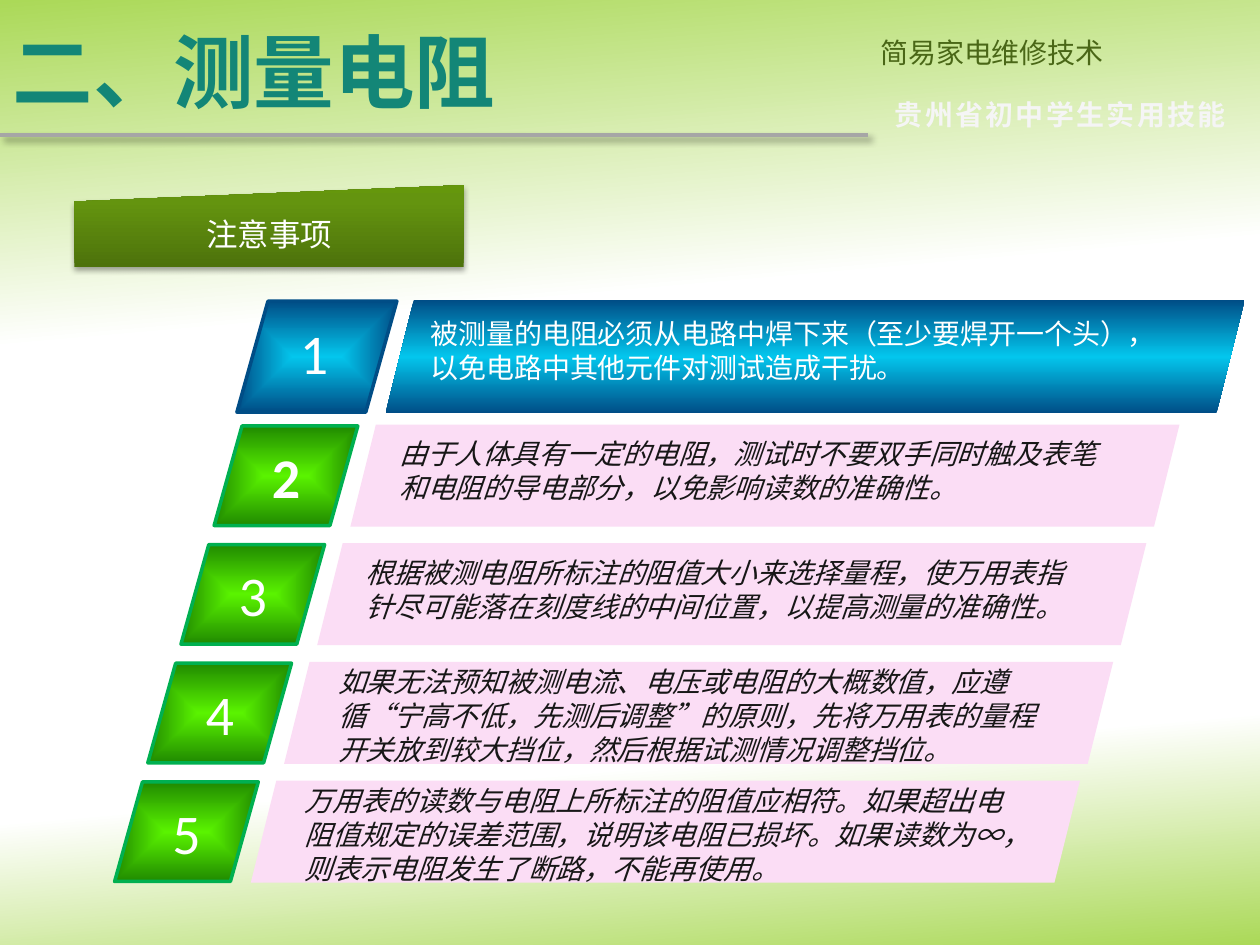
from dataclasses import dataclass
from typing import Optional

from lxml.etree import SubElement
from pptx import Presentation
from pptx.dml.color import RGBColor
from pptx.enum.shapes import MSO_CONNECTOR as Connector, MSO_SHAPE as Preset
from pptx.enum.text import MSO_ANCHOR as Anchor, MSO_AUTO_SIZE as AutoSize, PP_ALIGN as Align
from pptx.oxml.ns import qn
from pptx.util import Pt

Stops = tuple[tuple[int, str], ...]


@dataclass(frozen=True)
class Theme:
    cjk: str = "Noto Sans CJK SC"
    body_font: str = "Arial"
    digit_font: str = "Calibri"
    title_size: float = 46
    digit_size: float = 32
    label_size: float = 18
    body_size: float = 16
    body_leading: float = 19.5
    title: str = "138677"
    course: str = "4A6717"
    white: str = "FFFFFF"
    motto: str = "F5F5F5"
    ink: str = "171717"
    rule: str = "A6A6A6"
    banner: str = "FBDDF5"
    green_line: str = "00B050"
    blue_line: str = "004D86"
    page: Stops = ((0, "ABD958"), (33, "FFFFFF"), (52, "FFFFFF"), (78, "FFFFFF"), (100, "ABD958"))
    label: Stops = ((0, "4D720B"), (80, "64940F"), (100, "65970C"))
    green: Stops = ((0, "5AF300"), (100, "208A00"))
    blue: Stops = ((0, "03C6ED"), (100, "004D86"))
    blue_banner: Stops = ((0, "004D86"), (50, "03C6ED"), (100, "004D86"))


@dataclass(frozen=True)
class Box:
    left: float
    top: float
    width: float
    height: float

    def lengths(self) -> tuple:
        return Pt(self.left), Pt(self.top), Pt(self.width), Pt(self.height)

    def moved(self, right: float, down: float) -> "Box":
        return Box(self.left + right, self.top + down, self.width, self.height)


@dataclass(frozen=True)
class Style:
    size: float
    color: str
    latin: str = THEME_FONT if (THEME_FONT := Theme.cjk) else ""
    bold: bool = False
    italic: bool = False
    tracking: float = 0
    align: Align = Align.LEFT
    leading: Optional[float] = None


@dataclass(frozen=True)
class Note:
    number: str
    words: str
    badge: Box
    digit: Box
    banner: Box
    text: Box
    active: bool = False


THEME = Theme()
STEP_X, STEP_Y = -18.95, 67.8
BADGE = Box(122.4, 243.4, 82.1, 56.9)
DIGIT = BADGE.moved(25.9, 5.8)
BANNER = Box(200.2, 242.6, 473.8, 58.3)
TWO_LINES = Box(221, 245.5, 425.5, 46)
THREE_LINES = Box(224, 240.4, 425.5, 65.5)

ACTIVE_NOTE = Note(
    "1", "被测量的电阻必须从电路中焊下来（至少要焊开一个头），以免电路中其他元件对测试造成干扰。",
    Box(135.4, 172.1, 91.4, 63.4), Box(164.2, 178.6, 34.6, 45.4),
    Box(220.3, 171.4, 491, 64.8), Box(239, 177.1, 425.5, 46), True)
OTHER_NOTES = (
    ("由于人体具有一定的电阻，测试时不要双手同时触及表笔和电阻的导电部分，以免影响读数的准确性。", TWO_LINES),
    ("根据被测电阻所标注的阻值大小来选择量程，使万用表指针尽可能落在刻度线的中间位置，以提高测量的准确性。", TWO_LINES),
    ("如果无法预知被测电流、电压或电阻的大概数值，应遵循“宁高不低，先测后调整”的原则，"
     "先将万用表的量程开关放到较大挡位，然后根据试测情况调整挡位。", THREE_LINES),
    ("万用表的读数与电阻上所标注的阻值应相符。如果超出电阻值规定的误差范围，"
     "说明该电阻已损坏。如果读数为∞，则表示电阻发生了断路，不能再使用。", THREE_LINES),
)


def set_gradient(properties, stops: Stops, angle: Optional[float] = None) -> None:
    """Replace a solid fill by a gradient; without an angle it runs out from the centre."""
    solid = properties.find(qn("a:solidFill"))
    gradient = SubElement(properties, qn("a:gradFill"), rotWithShape="1")
    stop_list = SubElement(gradient, qn("a:gsLst"))
    for position, color in stops:
        stop = SubElement(stop_list, qn("a:gs"), pos=str(position * 1000))
        SubElement(stop, qn("a:srgbClr"), val=color)
    if angle is None:
        centre = SubElement(gradient, qn("a:path"), path="shape")
        SubElement(centre, qn("a:fillToRect"), l="50000", t="50000", r="50000", b="50000")
    else:
        SubElement(gradient, qn("a:lin"), ang=str(int(angle * 60000)), scaled="0")
    properties.replace(solid, gradient)


def set_shadow(properties, alpha: int, blur: float, distance: float, angle: int) -> None:
    effects = properties.find(qn("a:effectLst"))
    if effects is None:
        effects = SubElement(properties, qn("a:effectLst"))
    shadow = SubElement(effects, qn("a:outerShdw"), blurRad=str(Pt(blur)), dist=str(Pt(distance)),
                        dir=str(angle * 60000), algn="tl", rotWithShape="0")
    color = SubElement(shadow, qn("a:srgbClr"), val="000000")
    SubElement(color, qn("a:alpha"), val=str(alpha * 1000))


def write(frame, words: str, style: Style) -> None:
    para = frame.paragraphs[0]
    para.alignment = style.align
    if style.leading:
        para.line_spacing = Pt(style.leading)
    span = para.add_run()
    span.text = words
    font = span.font
    font.size, font.bold, font.italic = Pt(style.size), style.bold, style.italic
    font.color.rgb = RGBColor.from_string(style.color)
    font.name = style.latin
    properties = font._element
    properties.set("lang", "zh-CN")
    if style.tracking:
        properties.set("spc", str(int(style.tracking * 100)))
    SubElement(properties, qn("a:ea"), typeface=THEME.cjk)


def add_text(page, box: Box, words: str, style: Style) -> None:
    frame = page.shapes.add_textbox(*box.lengths()).text_frame
    frame.word_wrap = True
    frame.auto_size = AutoSize.NONE
    write(frame, words, style)


def add_panel(page, preset: Preset, box: Box, color: str, line: Optional[str] = None):
    panel = page.shapes.add_shape(preset, *box.lengths())
    panel.shadow.inherit = False
    panel.fill.solid()
    panel.fill.fore_color.rgb = RGBColor.from_string(color)
    if line:
        panel.line.color.rgb = RGBColor.from_string(line)
        panel.line.width = Pt(2)
    else:
        panel.line.fill.background()
    return panel


def add_note(page, note: Note) -> None:
    banner = add_panel(page, Preset.PARALLELOGRAM, note.banner, THEME.banner)
    if note.active:
        set_gradient(banner._element.spPr, THEME.blue_banner, 270)
    line, stops = (THEME.blue_line, THEME.blue) if note.active else (THEME.green_line, THEME.green)
    badge = add_panel(page, Preset.PARALLELOGRAM, note.badge, line, line)
    badge.adjustments[0] = 0.28
    set_gradient(badge._element.spPr, stops)
    add_text(page, note.digit, note.number,
             Style(THEME.digit_size, THEME.white, THEME.digit_font, bold=note.number == "2"))
    add_text(page, note.text, note.words,
             Style(THEME.body_size, THEME.white if note.active else THEME.ink, THEME.body_font,
                   italic=not note.active, leading=THEME.body_leading))


def add_header(page) -> None:
    rule = page.shapes.add_connector(Connector.STRAIGHT, Pt(0), Pt(77), Pt(496), Pt(77))
    rule.line.color.rgb = RGBColor.from_string(THEME.rule)
    rule.line.width = Pt(2.25)
    set_shadow(rule._element.spPr, 40, 4, 3, 45)

    title = page.shapes.title
    title.left, title.top, title.width, title.height = Box(0, 3.6, 496, 73.4).lengths()
    title.text_frame.vertical_anchor = Anchor.MIDDLE
    title.text_frame.auto_size = AutoSize.NONE
    write(title.text_frame, "二、测量电阻", Style(THEME.title_size, THEME.title, bold=True))

    add_text(page, Box(496, 16.6, 224, 26.6), "简易家电维修技术",
             Style(THEME.body_size, THEME.course, align=Align.JUSTIFY))
    add_text(page, Box(496, 52, 220, 30), "贵州省初中学生实用技能",
             Style(THEME.body_size, THEME.motto, bold=True, tracking=1.4, align=Align.CENTER))


def add_label(page) -> None:
    label = add_panel(page, Preset.FLOWCHART_MANUAL_INPUT, Box(42.5, 105.8, 222.5, 46.8), THEME.course)
    set_gradient(label._element.spPr, THEME.label, 270)
    set_shadow(label._element.spPr, 35, 3.1, 1.8, 90)
    label.text_frame.vertical_anchor = Anchor.MIDDLE
    write(label.text_frame, "注意事项", Style(THEME.label_size, THEME.white, align=Align.CENTER))


def main() -> None:
    deck = Presentation()
    deck.slide_width, deck.slide_height = Pt(720), Pt(540)
    page = deck.slides.add_slide(deck.slide_layouts[5])
    page.background.fill.solid()
    set_gradient(page.element.find(".//" + qn("p:bgPr")), THEME.page, 85)
    add_header(page)
    add_label(page)
    add_note(page, ACTIVE_NOTE)
    for index, (words, text) in enumerate(OTHER_NOTES):
        boxes = (box.moved(index * STEP_X, index * STEP_Y) for box in (BADGE, DIGIT, BANNER, text))
        add_note(page, Note(str(index + 2), words, *boxes))
    deck.save("out.pptx")


if __name__ == "__main__":
    main()
